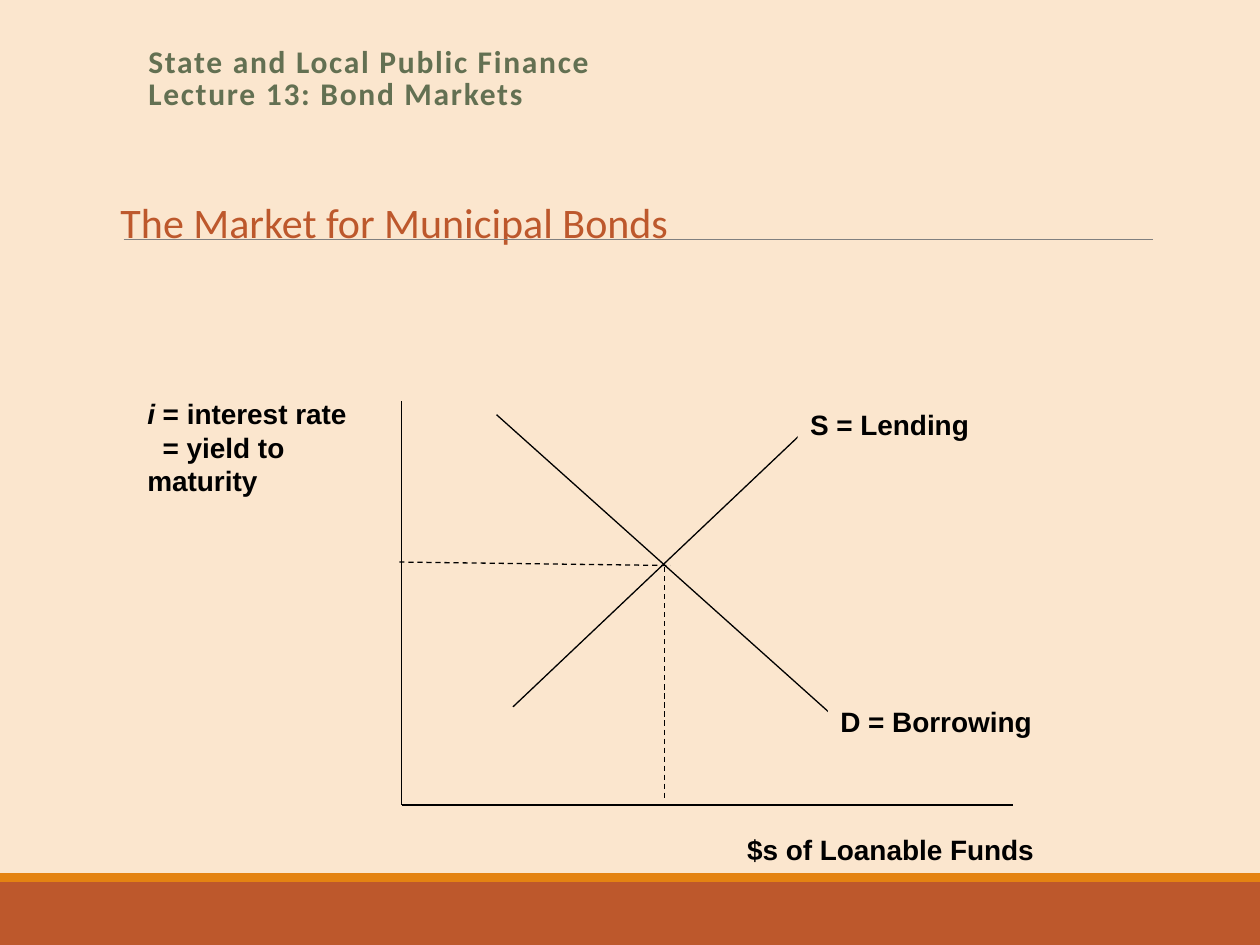
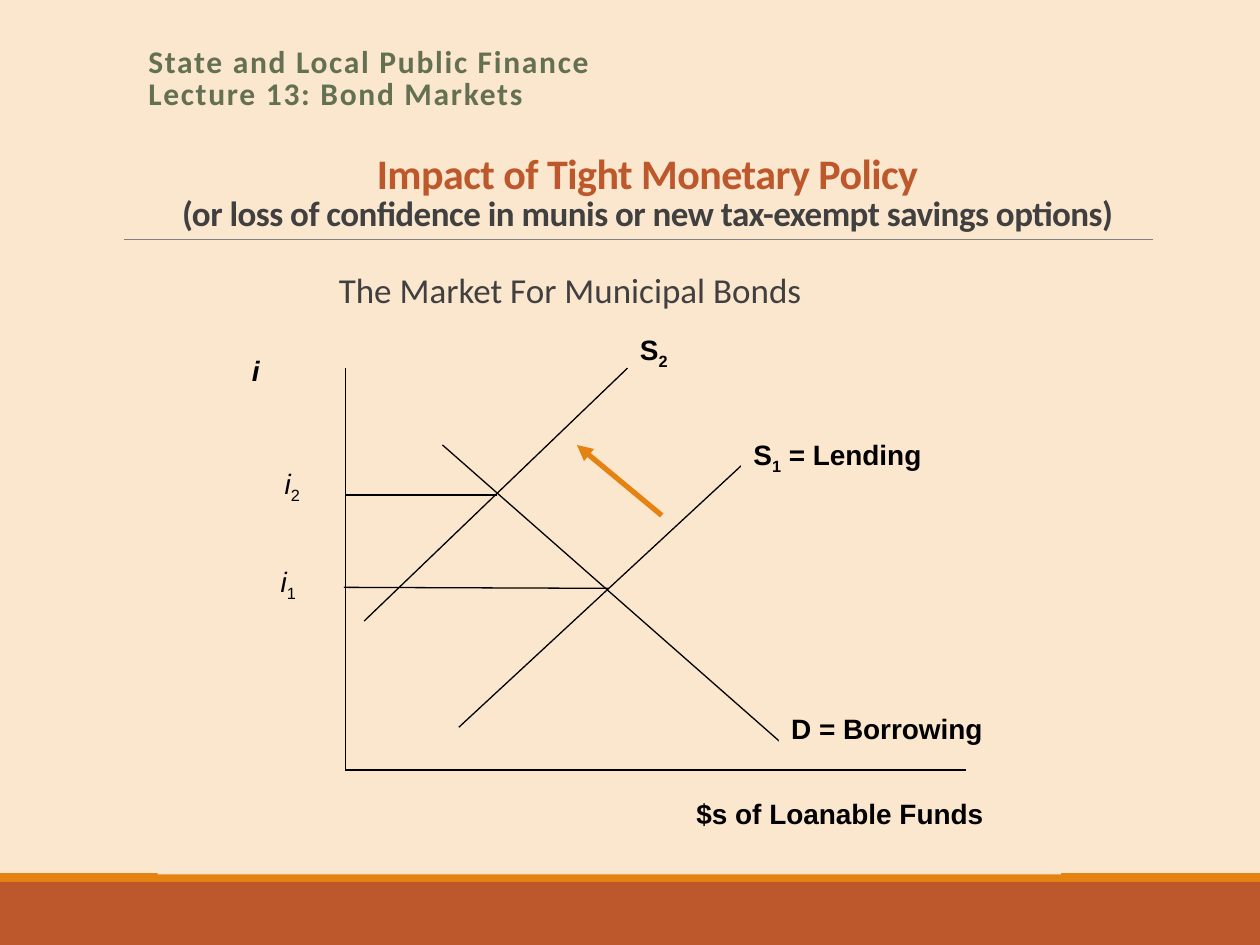
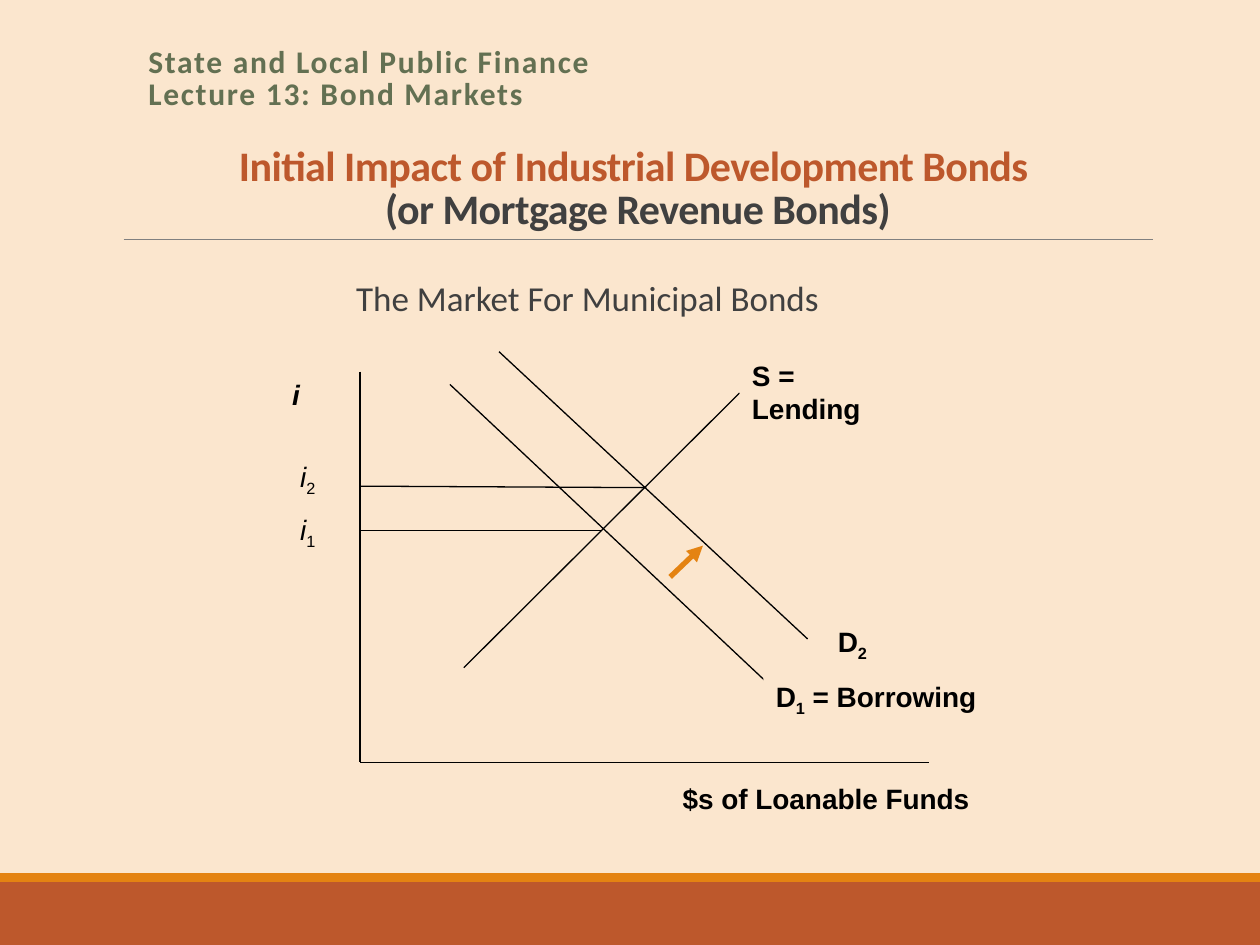
from lxml import etree
from pptx import Presentation
from pptx.dml.color import RGBColor
from pptx.enum.dml import MSO_LINE
from pptx.enum.shapes import MSO_CONNECTOR, MSO_SHAPE
from pptx.enum.text import MSO_ANCHOR, PP_ALIGN
from pptx.oxml.ns import qn
from pptx.util import Cm, Pt

STRAIGHT = MSO_CONNECTOR.STRAIGHT
RECTANGLE = MSO_SHAPE.RECTANGLE
DASH = MSO_LINE.DASH
TOP, BOTTOM = MSO_ANCHOR.TOP, MSO_ANCHOR.BOTTOM
LEFT, CENTER = PP_ALIGN.LEFT, PP_ALIGN.CENTER

COLOURS = {
    "cream": "FBE6CE",
    "rust": "BD582C",
    "orange": "E48312",
    "sage": "637052",
    "charcoal": "404040",
    "grey": "808080",
    "black": "000000",
}

CALIBRI = {"name": "Calibri", "size": Pt(24), "bold": False, "italic": False}
ARIAL = {"name": "Arial", "size": Pt(16), "bold": True, "italic": False}
TIGHT = {"spc": "-30"}
LOWERED = {"baseline": "-25000"}
FORMATS = {
    "header": ({**CALIBRI, "size": Pt(18), "bold": True}, "sage", {"spc": "100"}),
    "plain title": (CALIBRI, "rust", {}),
    "title": ({**CALIBRI, "bold": True}, "rust", TIGHT),
    "title note": ({**CALIBRI, "bold": True}, "charcoal", TIGHT),
    "small note": ({**CALIBRI, "size": Pt(20), "bold": True}, "charcoal", TIGHT),
    "caption": ({**CALIBRI, "size": Pt(20)}, "charcoal", {}),
    "label": (ARIAL, "black", {}),
    "label index": (ARIAL, "black", LOWERED),
    "axis": ({**ARIAL, "italic": True}, "black", {}),
    "rate": ({**ARIAL, "bold": False, "italic": True}, "black", {}),
    "rate index": ({**ARIAL, "bold": False}, "black", LOWERED),
}

STROKES = {
    "divider": ("grey", 0.5),
    "solid": ("black", 0.75),
    "dashed": ("black", 0.75),
    "arrow": ("orange", 3),
}

PADDING = 0.25
HEADER = [
    [("State and Local Public Finance", "header")],
    [("Lecture 13: Bond Markets", "header")],
]
DIVIDER = (2.49, 4.83, 23.24, 4.83, "divider")
BANDS = [((0, 17.78, 25.4, 1.27), "rust"), ((0, 17.6, 25.4, 0.18), "orange")]

FUNDS = [[("$s of Loanable Funds", "label")]]
CAPTION = [[("The Market For Municipal Bonds", "caption")]]
LENDING = [[("S = Lending", "label")]]
BORROWING = [[("D = Borrowing", "label")]]
AXIS = [[("i", "axis")]]
RATE_1 = [[("i", "rate"), ("1", "rate index")]]
RATE_2 = [[("i", "rate"), ("2", "rate index")]]

SLIDES = [
    {
        "title": [[("The Market for Municipal Bonds", "plain title")]],
        "title area": (2.18, 3.84, 11.79, 1.27),
        "title layout": (TOP, LEFT, 1.0),
        "panel": None,
        "axes": (8.1, 8.08, 20.42, 16.23),
        "lines": [
            (10.01, 8.36, 16.87, 14.5, "solid"),
            (10.34, 14.25, 16.21, 8.69, "solid"),
            (8.05, 11.33, 13.51, 11.4, "dashed"),
            (13.39, 11.43, 13.39, 16.15, "dashed"),
        ],
        "labels": [
            ((16.69, 14.07, 4.47, 1.73), PADDING, BORROWING),
            ((14.81, 16.66, 6.35, 0.76), PADDING, FUNDS),
            ((16.08, 8.08, 4.47, 1.73), PADDING, LENDING),
            ((2.97, 7.87, 5.03, 3.86), 0, [
                [("i", "axis"), (" = interest rate", "label")],
                [("= yield to maturity", "label")],
            ]),
        ],
    },
    {
        "title": [
            [("Impact of Tight Monetary Policy", "title")],
            [("(or loss of confidence in munis or new tax-exempt savings options)",
              "small note")],
        ],
        "title area": (2.57, 0.81, 20.96, 4.04),
        "title layout": (BOTTOM, CENTER, 0.85),
        "panel": (3.18, 4.88, 18.21, 12.75),
        "axes": (6.96, 7.42, 19.48, 15.52),
        "lines": [
            (8.92, 8.97, 15.88, 15.09, "solid"),
            (9.25, 14.66, 15.21, 9.14, "solid"),
            (6.93, 11.84, 12.27, 11.86, "solid"),
            (6.96, 9.98, 10.01, 9.98, "solid"),
            (7.34, 12.52, 12.65, 7.42, "solid"),
            (13.34, 10.39, 11.63, 8.97, "arrow"),
        ],
        "labels": [
            ((15.7, 14.22, 4.55, 1.27), PADDING, BORROWING),
            ((13.79, 15.93, 6.45, 1.04), PADDING, FUNDS),
            ((14.94, 8.69, 4.55, 1.7), PADDING,
             [[("S", "label"), ("1", "label index"), (" = Lending", "label")]]),
            ((12.9, 6.58, 1.52, 1.27), 0, [[("S", "label"), ("2", "label index")]]),
            ((5.08, 6.99, 1.14, 1.27), 0, AXIS),
            ((5.66, 11.25, 1.14, 1.27), 0, RATE_1),
            ((5.74, 9.27, 1.14, 1.27), 0, RATE_2),
            ((6.58, 5.28, 12.9, 1.27), PADDING, CAPTION),
        ],
    },
    {
        "title": [
            [("Initial Impact of Industrial Development Bonds", "title")],
            [(" (or Mortgage Revenue Bonds)", "title note")],
        ],
        "title area": (2.29, 0.79, 20.96, 4.04),
        "title layout": (BOTTOM, CENTER, 0.85),
        "panel": (3.81, 5, 16.64, 12.42),
        "axes": (7.26, 7.49, 18.72, 15.37),
        "lines": [
            (9.07, 7.75, 15.42, 13.72, "solid"),
            (9.35, 13.46, 14.91, 7.92, "solid"),
            (7.24, 10.69, 12.12, 10.69, "solid"),
            (7.26, 9.8, 13.03, 9.83, "solid"),
            (10.06, 7.09, 16.28, 12.88, "solid"),
            (13.51, 11.63, 14.17, 11, "arrow"),
        ],
        "labels": [
            ((15.39, 13.56, 5.69, 1.5), PADDING,
             [[("D", "label"), ("1", "label index"), (" = Borrowing", "label")]]),
            ((13.51, 15.62, 8.08, 1.42), PADDING, FUNDS),
            ((14.91, 7.09, 3.58, 1.65), PADDING, LENDING),
            ((16.64, 12.47, 2.41, 1.24), PADDING,
             [[("D", "label"), ("2", "label index")]]),
            ((5.89, 7.49, 1.04, 1.24), 0, AXIS),
            ((6.05, 9.14, 1.04, 1.24), 0, RATE_2),
            ((6.05, 10.21, 1.04, 1.24), 0, RATE_1),
            ((6.93, 5.44, 11.79, 1.24), PADDING, CAPTION),
        ],
    },
]


def add_panel(page, area, colour):
    panel = page.shapes.add_shape(RECTANGLE, *map(Cm, area))
    panel.shadow.inherit = False
    panel.fill.solid()
    panel.fill.fore_color.rgb = RGBColor.from_string(COLOURS[colour])
    panel.line.fill.background()
    return panel


def write_lines(box, lines, layout=(TOP, LEFT, 1.0), padding=PADDING, wrap=True):
    anchor, alignment, spacing = layout
    frame = box.text_frame
    frame.word_wrap = wrap
    frame.vertical_anchor = anchor
    frame.margin_left = frame.margin_right = Cm(padding)
    frame.margin_top = frame.margin_bottom = Cm(0.13)
    for number, line in enumerate(lines):
        para = frame.add_paragraph() if number else frame.paragraphs[0]
        para.alignment = alignment
        para.line_spacing = spacing
        if line[0][0].startswith("="):
            para._p.get_or_add_pPr().set("indent", str(Cm(0.31)))
        for text, style in line:
            span = para.add_run()
            span.text = text
            values, colour, extras = FORMATS[style]
            for name, value in values.items():
                setattr(span.font, name, value)
            span.font.color.rgb = RGBColor.from_string(COLOURS[colour])
            for name, value in extras.items():
                span._r.get_or_add_rPr().set(name, value)


deck = Presentation()
deck.slide_width, deck.slide_height = Cm(25.4), Cm(19.05)
backdrop = deck.slide_master.background.fill
backdrop.solid()
backdrop.fore_color.rgb = RGBColor.from_string(COLOURS["cream"])

for content in SLIDES:
    page = deck.slides.add_slide(deck.slide_layouts[6])
    for area, colour in BANDS:
        add_panel(page, area, colour)

    header = page.shapes.add_textbox(Cm(2.74), Cm(0.84), Cm(20.96), Cm(1.65))
    write_lines(header, HEADER, (TOP, LEFT, 0.85))
    title = page.shapes.add_textbox(*map(Cm, content["title area"]))
    write_lines(title, content["title"], content["title layout"],
                wrap=len(content["title"]) > 1)
    if content["panel"]:
        add_panel(page, content["panel"], "cream")

    left, top, right, bottom = content["axes"]
    axes = [(left, top, left, bottom, "solid"), (left, bottom, right, bottom, "solid")]
    for *ends, stroke in [DIVIDER, *axes, *content["lines"]]:
        colour, width = STROKES[stroke]
        connector = page.shapes.add_connector(STRAIGHT, *map(Cm, ends))
        connector.line.color.rgb = RGBColor.from_string(COLOURS[colour])
        connector.line.width = Pt(width)
        if stroke == "dashed":
            connector.line.dash_style = DASH
        outline = connector._element.spPr
        if stroke == "arrow":
            etree.SubElement(outline.find(qn("a:ln")), qn("a:tailEnd"), type="triangle")
        etree.SubElement(outline, qn("a:effectLst"))

    for area, padding, lines in content["labels"]:
        write_lines(add_panel(page, area, "cream"), lines, padding=padding)

deck.save("out.pptx")
